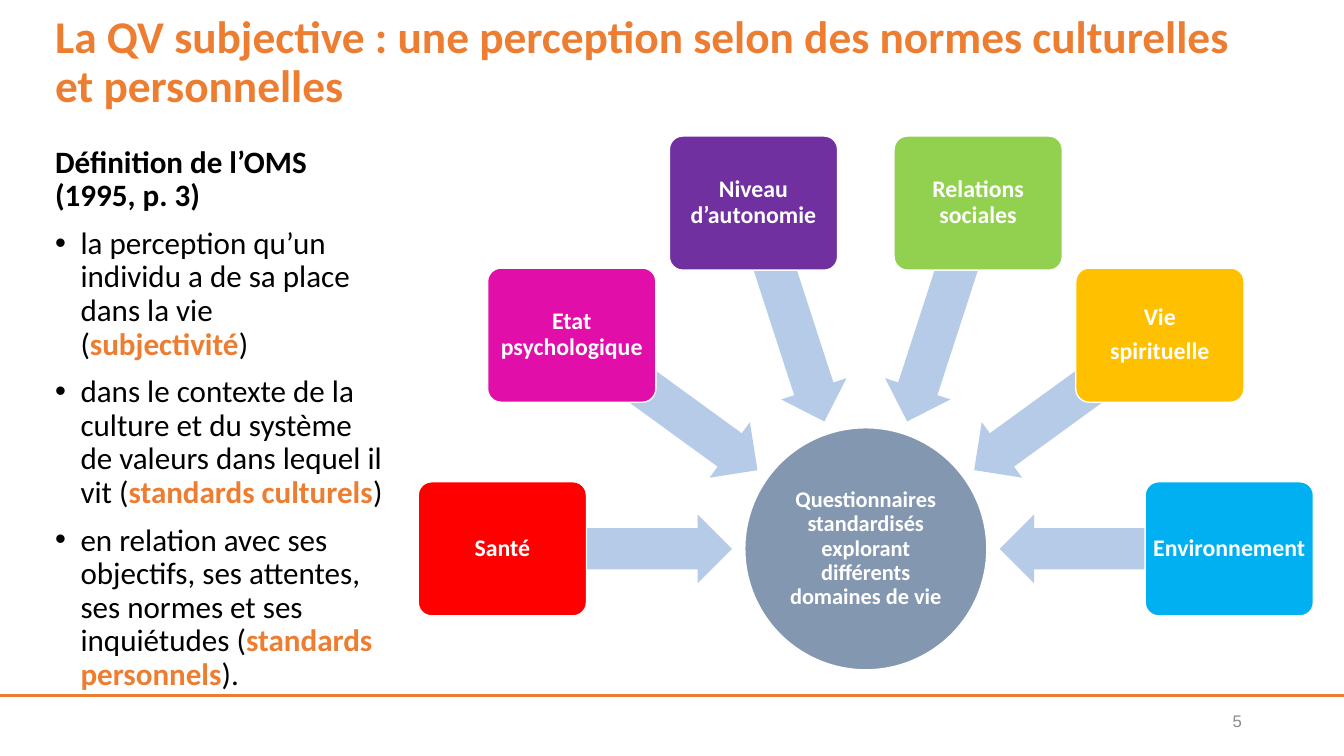
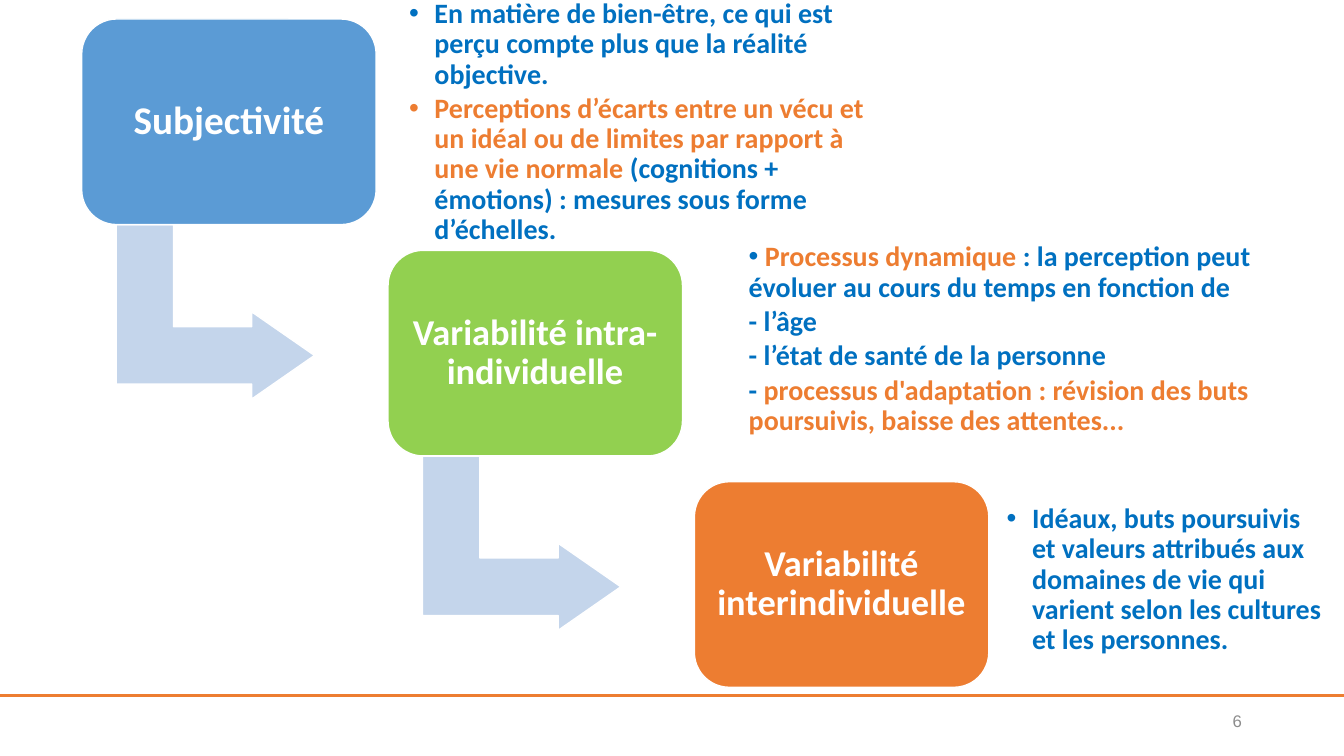
from dataclasses import dataclass
from math import cos, radians, sin

from lxml import etree
from pptx import Presentation
from pptx.dml.color import RGBColor
from pptx.enum.shapes import MSO_CONNECTOR, MSO_SHAPE
from pptx.enum.text import MSO_ANCHOR, PP_ALIGN
from pptx.oxml.ns import qn
from pptx.util import Cm, Pt

ROUNDED = MSO_SHAPE.ROUNDED_RECTANGLE
ELLIPSE = MSO_SHAPE.OVAL
LEFT_ARROW = MSO_SHAPE.LEFT_ARROW
BENT_ARROW = MSO_SHAPE.BENT_UP_ARROW
STRAIGHT = MSO_CONNECTOR.STRAIGHT
TOP = MSO_ANCHOR.TOP
MIDDLE = MSO_ANCHOR.MIDDLE
LEFT = PP_ALIGN.LEFT
CENTER = PP_ALIGN.CENTER
RIGHT = PP_ALIGN.RIGHT


@dataclass(frozen=True)
class Theme:
    font: str = "Calibri"
    number_font: str = "Arial"
    orange: str = "ED7D31"
    black: str = "000000"
    white: str = "FFFFFF"
    gray: str = "8C8C8C"
    blue_text: str = "0070C0"
    slate: str = "8497B0"
    radial_arrow: str = "B5CBE7"
    step_arrow: str = "C4D5EB"
    red: str = "FF0000"
    magenta: str = "E20EAA"
    purple: str = "7030A0"
    green: str = "92D050"
    amber: str = "FFC000"
    cyan: str = "00B0F0"
    blue: str = "5B9BD5"
    title_size: float = 32.4
    body_size: float = 22.2
    detail_size: float = 20
    domain_size: float = 17
    hub_size: float = 16
    number_size: float = 12


THEME = Theme()


@dataclass(frozen=True)
class Area:
    left: float
    top: float
    width: float
    height: float

    def lengths(self) -> tuple:
        return Cm(self.left), Cm(self.top), Cm(self.width), Cm(self.height)


@dataclass(frozen=True)
class Span:
    text: str
    color: str
    bold: bool = True


@dataclass(frozen=True)
class Para:
    spans: tuple
    bullet: bool = False
    margin: float = 0
    hanging: float = 0


@dataclass(frozen=True)
class TextStyle:
    size: float
    font: str = THEME.font
    align: PP_ALIGN = LEFT
    anchor: MSO_ANCHOR = MIDDLE
    inset_x: float = 0.25
    inset_y: float = 0.13
    gap: float = 0
    line_spacing: float = 0.9


@dataclass(frozen=True)
class Domain:
    label: str
    fill: str


@dataclass(frozen=True)
class Step:
    label: str
    fill: str
    size: float
    inset: float
    detail_area: Area
    details: tuple


def bulleted(*spans: Span) -> Para:
    return Para(spans, True, 0.64, 0.64)


def indented(*spans: Span, bullet: bool = False) -> Para:
    return Para(spans, bullet, 0.64)


def plain(text: str) -> Span:
    return Span(text, THEME.black, False)


def strong(text: str) -> Span:
    return Span(text, THEME.orange)


def accent(text: str) -> Span:
    return Span(text, THEME.blue_text)


def labels(text: str) -> tuple:
    return tuple(Para((Span(line, THEME.white),)) for line in text.split("\n"))


def set_indent(paragraph, para: Para) -> None:
    properties = paragraph._p.get_or_add_pPr()
    properties.set("marL", str(Cm(para.margin)))
    properties.set("indent", str(-Cm(para.hanging)))
    if para.bullet:
        color = etree.SubElement(properties, qn("a:buClr"))
        etree.SubElement(color, qn("a:srgbClr"), val=para.spans[0].color)
        etree.SubElement(properties, qn("a:buFont"), typeface="Arial")
        etree.SubElement(properties, qn("a:buChar"), char="•")


def write(frame, paras: tuple, style: TextStyle) -> None:
    frame.word_wrap = True
    frame.vertical_anchor = style.anchor
    frame.margin_left = frame.margin_right = Cm(style.inset_x)
    frame.margin_top = frame.margin_bottom = Cm(style.inset_y)
    for index, para in enumerate(paras):
        paragraph = frame.add_paragraph() if index else frame.paragraphs[0]
        paragraph.alignment = style.align
        paragraph.line_spacing = style.line_spacing
        if index:
            paragraph.space_before = Pt(style.gap)
        set_indent(paragraph, para)
        paragraph.text = para.spans[0].text
        for span in para.spans[1:]:
            paragraph.add_run().text = span.text
        for run, span in zip(paragraph.runs, para.spans):
            run.font.name = style.font
            run.font.size = Pt(style.size)
            run.font.bold = span.bold
            run.font.color.rgb = RGBColor.from_string(span.color)


def add_text(page, area: Area, paras: tuple, style: TextStyle) -> None:
    write(page.shapes.add_textbox(*area.lengths()).text_frame, paras, style)


def add_figure(page, kind: MSO_SHAPE, area: Area, fill: str, adjustments: tuple = (),
               rotation: float = 0, outlined: bool = True):
    figure = page.shapes.add_shape(kind, *area.lengths())
    figure.shadow.inherit = False
    figure.fill.solid()
    figure.fill.fore_color.rgb = RGBColor.from_string(fill)
    if outlined:
        figure.line.color.rgb = RGBColor.from_string(THEME.white)
        figure.line.width = Pt(1)
    else:
        figure.line.fill.background()
    for index, value in enumerate(adjustments):
        figure.adjustments[index] = value
    figure.rotation = rotation
    return figure


def add_page(deck, number: int):
    page = deck.slides.add_slide(deck.slide_layouts[6])
    rule = page.shapes.add_connector(STRAIGHT, 0, Cm(17.53), deck.slide_width, Cm(17.53))
    rule.line.color.rgb = RGBColor.from_string(THEME.orange)
    rule.line.width = Pt(2.25)
    etree.SubElement(rule._element.spPr, qn("a:effectLst"))
    add_text(page, Area(23.93, 17.65, 7.62, 1.02), (Para((Span(str(number), THEME.gray, False),)),),
             TextStyle(THEME.number_size, THEME.number_font, RIGHT, line_spacing=1))
    return page


def around(angle: float, radius: float, width: float, height: float) -> Area:
    center_x = 21.82 + radius * cos(radians(angle))
    center_y = 13.83 + radius * sin(radians(angle))
    return Area(center_x - width / 2, center_y - height / 2, width, height)


DEFINITION = (
    Para((Span("Définition de l’OMS (1995, p. 3)", THEME.black),)),
    bulleted(plain("la perception qu’un individu a de sa place dans la vie ("),
             strong("subjectivité"), plain(")")),
    bulleted(plain("dans le contexte de la culture et du système de valeurs dans lequel il vit ("),
             strong("standards culturels"), plain(")")),
    bulleted(plain("en relation avec ses objectifs, ses attentes, ses normes et ses inquiétudes ("),
             strong("standards personnels"), plain(").")),
)

DOMAINS = (
    Domain("Santé", THEME.red),
    Domain("Etat psychologique", THEME.magenta),
    Domain("Niveau d’autonomie", THEME.purple),
    Domain("Relations sociales", THEME.green),
    Domain("Vie\nspirituelle", THEME.amber),
    Domain("Environnement", THEME.cyan),
)

STEPS = (
    Step("Subjectivité", THEME.blue, 28, 0.3, Area(10.11, 0.53, 11.94, 5.11), (
        bulleted(accent("En matière de bien-être, ce qui est perçu compte plus que la réalité objective.")),
        bulleted(strong("Perceptions d’écarts entre un vécu et un idéal ou de limites par rapport à "
                        "une vie normale "),
                 accent("(cognitions + émotions) : mesures sous forme d’échelles.")),
    )),
    Step("Variabilité intra-individuelle", THEME.green, 26, 0.28, Area(18.03, 5.97, 14.1, 5.18), (
        indented(accent(" "), strong("Processus dynamique "),
                 accent(": la perception peut évoluer au cours du temps en fonction de"), bullet=True),
        indented(accent("- l’âge")),
        indented(accent("- l’état de santé de la personne")),
        indented(accent("- "), strong("processus d'adaptation : révision des buts poursuivis, "
                                      "baisse des attentes...")),
    )),
    Step("Variabilité interindividuelle", THEME.orange, 26, 0.28, Area(25.17, 12.52, 8.41, 4.19), (
        bulleted(accent("Idéaux, buts poursuivis et valeurs attribués aux domaines de vie qui "
                        "varient selon les cultures et les personnes.")),
    )),
)


def build_perception(deck) -> None:
    page = add_page(deck, 5)
    title = "La QV subjective : une perception selon des normes culturelles et personnelles"
    add_text(page, Area(1.14, 0.25, 30.4, 2.7), (Para((strong(title),)),), TextStyle(THEME.title_size))
    add_text(page, Area(1.14, 3.56, 8.86, 13.64), DEFINITION,
             TextStyle(THEME.body_size, anchor=TOP, gap=10))
    hub = add_figure(page, ELLIPSE, around(0, 0, 6.1, 6.1), THEME.slate)
    write(hub.text_frame, labels("Questionnaires standardisés explorant différents domaines de vie"),
          TextStyle(THEME.hub_size, align=CENTER, inset_x=0.03, inset_y=0.03))
    domain_style = TextStyle(THEME.domain_size, align=CENTER, inset_x=0.1, inset_y=0.1, gap=6)
    for index, domain in enumerate(DOMAINS):
        angle = 180 + index * 180 / (len(DOMAINS) - 1)
        add_figure(page, LEFT_ARROW, around(angle, 6.27, 5.79, 1.73), THEME.radial_arrow,
                   (0.6, 0.5), angle % 360, False)
        node = add_figure(page, ROUNDED, around(angle, 9.16, 4.24, 3.38), domain.fill, (0.1,))
        write(node.text_frame, labels(domain.label), domain_style)


def build_variability(deck) -> None:
    page = add_page(deck, 6)
    detail_style = TextStyle(THEME.detail_size, inset_x=0.2, inset_y=0.2, gap=3)
    for index, step in enumerate(STEPS):
        left, top = 2.06 + index * 7.72, 0.48 + index * 5.83
        if index < len(STEPS) - 1:
            add_figure(page, BENT_ARROW, Area(left + 1.17, top + 4.88, 4.39, 5), THEME.step_arrow,
                       (0.33, 0.25, 0.36), 90)
        block = add_figure(page, ROUNDED, Area(left, top, 7.42, 5.18), step.fill, (0.17,))
        write(block.text_frame, labels(step.label),
              TextStyle(step.size, align=CENTER, inset_x=step.inset, inset_y=step.inset))
        add_text(page, step.detail_area, step.details, detail_style)


def main() -> None:
    deck = Presentation()
    deck.slide_width, deck.slide_height = Cm(33.87), Cm(19.05)
    build_perception(deck)
    build_variability(deck)
    deck.save("out.pptx")


if __name__ == "__main__":
    main()
